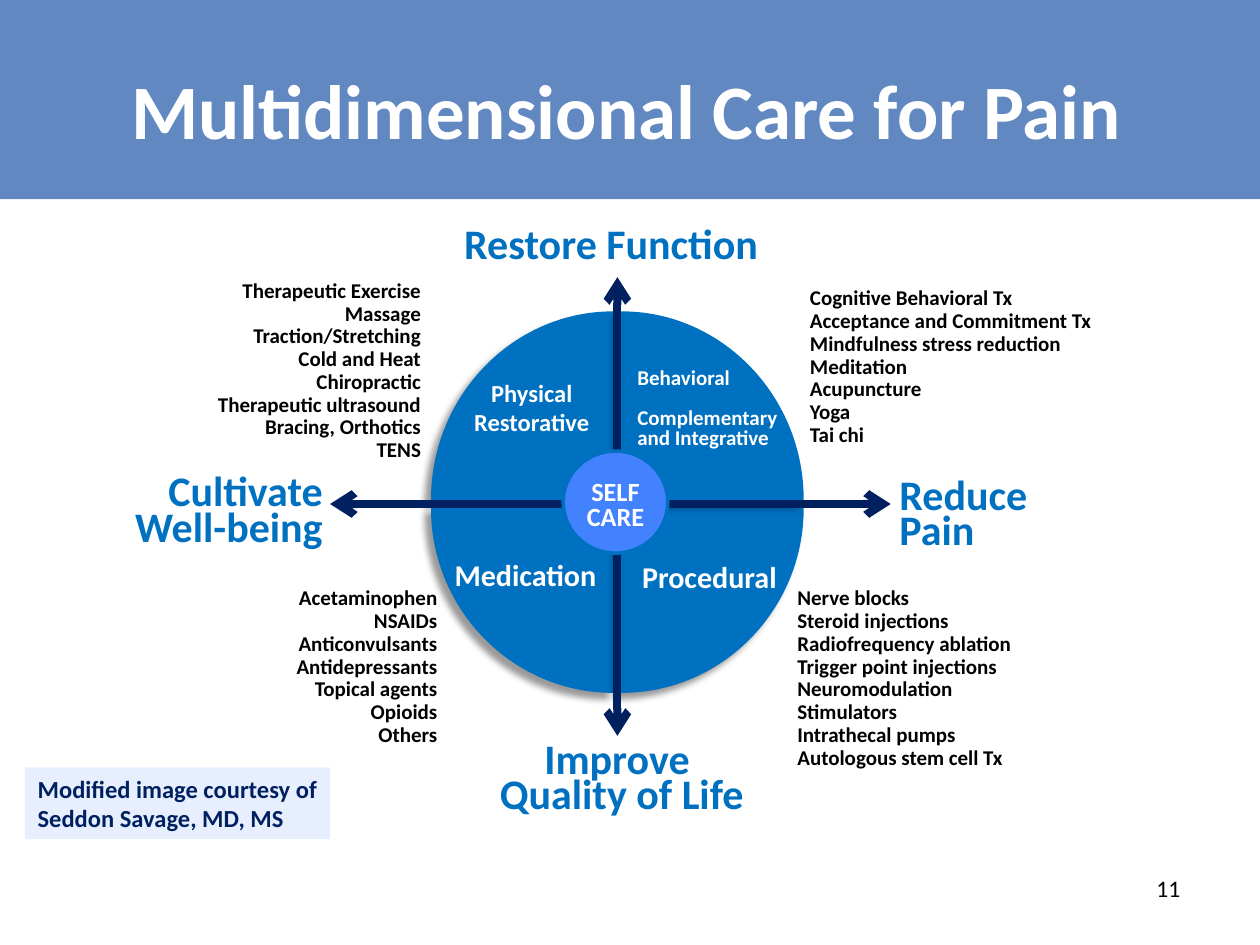
from dataclasses import dataclass

from lxml import etree
from pptx import Presentation
from pptx.dml.color import RGBColor
from pptx.enum import shapes, text
from pptx.oxml.ns import qn
from pptx.util import Emu, Inches, Pt

LEFT, CENTER, RIGHT = text.PP_ALIGN.LEFT, text.PP_ALIGN.CENTER, text.PP_ALIGN.RIGHT


@dataclass(frozen=True)
class Theme:
    font: str = "Calibri"
    white: str = "FFFFFF"
    black: str = "000000"
    banner: str = "6188C1"
    blue: str = "0070C0"
    navy: str = "002060"
    hub: str = "4382FF"
    note: str = "E7EFFF"
    title_size: float = 44
    goal_size: float = 24
    sector_size: float = 17.2
    hub_size: float = 15
    label_size: float = 14
    number_size: float = 13.5
    list_size: float = 12
    outline: float = 2
    arrow: float = 4.5


THEME = Theme()


@dataclass(frozen=True)
class Block:
    """A text box: place in inches, one string per paragraph."""
    place: tuple[float, float, float, float]
    lines: tuple[str, ...]
    size: float
    color: str
    align: text.PP_ALIGN = LEFT
    spacing: float = 1.0
    after: float = 0
    before: float = 0
    bold: bool = True
    middle: bool = False
    fill: str | None = None
    right_inset: float = 0.1


@dataclass(frozen=True)
class Sector:
    """A quarter disc; the signs point away from the centre."""
    sign_x: int
    sign_y: int
    height: float


CENTER_X, CENTER_Y = 4.9, 4.0
HALF_GAP = 0.035
SECTOR_WIDTH = 1.43
BEZIER = 0.55

SECTORS = (
    Sector(-1, -1, 1.48),
    Sector(-1, 1, 1.45),
    Sector(1, 1, 1.45),
    Sector(1, -1, 1.48),
)


def sector_label(place, *lines: str, **options) -> Block:
    return Block(place, lines, color=THEME.white, **options)


def treatments(place, align: text.PP_ALIGN, *lines: str) -> Block:
    return Block(place, lines, THEME.list_size, THEME.black, align, 0.8, after=1.5)


def goal(place, align: text.PP_ALIGN, *lines: str) -> Block:
    return Block(place, lines, THEME.goal_size, THEME.blue, align, 0.7)


FRAME_TEXTS = (
    Block((0.2, 0.24, 9.55, 1.25), ("Multidimensional Care for Pain",),
          THEME.title_size, THEME.white, CENTER, middle=True),
    Block((9.08, 6.89, 0.75, 0.33), ("11",), THEME.number_size, THEME.black, bold=False),
    Block((0.2, 6.09, 2.42, 0.57), ("Modified image courtesy of Seddon Savage, MD, MS",),
          THEME.label_size, THEME.navy, fill=THEME.note, right_inset=0.05),
)

SECTOR_TEXTS = (
    sector_label((3.64, 2.95, 1.16, 0.57), "Physical Restorative",
                 size=THEME.label_size, align=CENTER),
    sector_label((3.42, 4.4, 1.5, 0.36), "Medication",
                 size=THEME.sector_size, align=CENTER, spacing=0.9),
    sector_label((4.9, 4.44, 1.46, 0.34), "Procedural",
                 size=THEME.sector_size, align=CENTER, spacing=0.8),
    sector_label((4.96, 2.88, 1.38, 0.75), "Behavioral", "Complementary and Integrative",
                 size=THEME.list_size, spacing=0.8, before=11.7),
    treatments((1.48, 2.19, 1.96, 1.61), RIGHT,
               "Therapeutic Exercise", "Massage", "Traction/Stretching", "Cold and Heat",
               "Chiropractic", "Therapeutic ultrasound", "Bracing, Orthotics", "TENS"),
    treatments((1.84, 4.63, 1.73, 1.42), RIGHT,
               "Acetaminophen", "NSAIDs", "Anticonvulsants", "Antidepressants",
               "Topical agents", "Opioids", "Others"),
    treatments((6.23, 4.63, 2.67, 1.61), LEFT,
               "Nerve blocks", "Steroid injections", "Radiofrequency ablation",
               "Trigger point injections", "Neuromodulation", "Stimulators",
               "Intrathecal pumps", "Autologous stem cell Tx"),
    treatments((6.33, 2.25, 2.86, 1.42), LEFT,
               "Cognitive Behavioral Tx", "Acceptance and Commitment Tx",
               "Mindfulness stress reduction", "Meditation", "Acupuncture", "Yoga", "Tai chi"),
    goal((0.85, 3.75, 1.81, 0.68), RIGHT, "Cultivate", "Well-being"),
    goal((7.04, 3.78, 1.8, 0.68), LEFT, "Reduce Pain"),
    goal((3.8, 5.87, 2.27, 0.68), CENTER, "Improve ", "Quality of Life"),
    goal((3.42, 1.79, 2.86, 0.4), CENTER, "Restore Function"),
)

HUB_TEXT = sector_label((4.46, 3.77, 0.85, 0.51), "SELF", "CARE",
                        size=THEME.hub_size, align=CENTER, spacing=0.8)
ARROWS = (
    ((2.62, CENTER_Y), (7.07, CENTER_Y)),
    ((CENTER_X, 2.2), (CENTER_X, 5.84)),
)


def paint(shape, fill: str, line: str | None = None) -> None:
    shape.shadow.inherit = False
    shape.fill.solid()
    shape.fill.fore_color.rgb = RGBColor.from_string(fill)
    if line:
        shape.line.color.rgb = RGBColor.from_string(line)
        shape.line.width = Pt(THEME.outline)
    else:
        shape.line.fill.background()


def add_preset(page, kind, place, fill: str, line: str | None = None) -> None:
    paint(page.shapes.add_shape(kind, *map(Inches, place)), fill, line)


def add_block(page, block: Block) -> None:
    box = page.shapes.add_textbox(*map(Inches, block.place))
    if block.fill:
        box.fill.solid()
        box.fill.fore_color.rgb = RGBColor.from_string(block.fill)
    frame = box.text_frame
    frame.word_wrap = True
    frame.margin_right = Inches(block.right_inset)
    if block.middle:
        frame.vertical_anchor = text.MSO_ANCHOR.MIDDLE
    for index, line in enumerate(block.lines):
        para = frame.add_paragraph() if index else frame.paragraphs[0]
        para.alignment = block.align
        para.line_spacing = block.spacing
        para.space_after = Pt(block.after)
        para.space_before = Pt(block.before if index else 0)
        span = para.add_run()
        span.text = line
        span.font.name = THEME.font
        span.font.size = Pt(block.size)
        span.font.bold = block.bold
        span.font.color.rgb = RGBColor.from_string(block.color)


def add_sector(page, sector: Sector) -> None:
    """Build a right triangle, then bend its long side into an arc."""
    inner_x = CENTER_X + sector.sign_x * HALF_GAP
    inner_y = CENTER_Y + sector.sign_y * HALF_GAP
    reach_x = sector.sign_x * SECTOR_WIDTH
    reach_y = sector.sign_y * sector.height

    def point(across: float, along: float) -> tuple[Emu, Emu]:
        return Inches(inner_x + across * reach_x), Inches(inner_y + along * reach_y)

    builder = page.shapes.build_freeform(*point(1, 0))
    builder.add_line_segments([point(0, 1), point(0, 0)], close=True)
    shape = builder.convert_to_shape()
    paint(shape, THEME.blue, THEME.blue)

    side = next(shape.element.iter(qn("a:lnTo")))
    curve = etree.Element(qn("a:cubicBezTo"))
    for x, y in (point(1, BEZIER), point(BEZIER, 1), point(0, 1)):
        etree.SubElement(curve, qn("a:pt"), x=str(x - shape.left), y=str(y - shape.top))
    side.getparent().replace(side, curve)

    effects = shape.element.spPr.find(qn("a:effectLst"))
    shadow = etree.SubElement(effects, qn("a:outerShdw"), blurRad=str(Pt(4)), dist=str(Pt(5)),
                              dir=str(135 * 60000), algn="tr", rotWithShape="0")
    tint = etree.SubElement(shadow, qn("a:srgbClr"), val=THEME.black)
    etree.SubElement(tint, qn("a:alpha"), val="40000")


def add_arrow(page, start: tuple[float, float], end: tuple[float, float]) -> None:
    arrow = page.shapes.add_connector(shapes.MSO_CONNECTOR.STRAIGHT, *map(Inches, start + end))
    arrow.line.color.rgb = RGBColor.from_string(THEME.navy)
    arrow.line.width = Pt(THEME.arrow)
    outline = arrow.line._get_or_add_ln()
    for tip in ("a:headEnd", "a:tailEnd"):
        etree.SubElement(outline, qn(tip), type="arrow")
    etree.SubElement(arrow.element.spPr, qn("a:effectLst"))


def main() -> None:
    deck = Presentation()
    deck.slide_width, deck.slide_height = Inches(10), Inches(7.5)
    page = deck.slides.add_slide(deck.slide_layouts[6])
    add_preset(page, shapes.MSO_SHAPE.RECTANGLE, (0, 0, 10, 1.58), THEME.banner)
    for block in FRAME_TEXTS:
        add_block(page, block)
    for sector in SECTORS:
        add_sector(page, sector)
    for block in SECTOR_TEXTS:
        add_block(page, block)
    for start, end in ARROWS:
        add_arrow(page, start, end)
    add_preset(page, shapes.MSO_SHAPE.OVAL, (4.47, 3.58, 0.83, 0.81), THEME.hub, THEME.blue)
    add_block(page, HUB_TEXT)
    deck.save("out.pptx")


if __name__ == "__main__":
    main()
